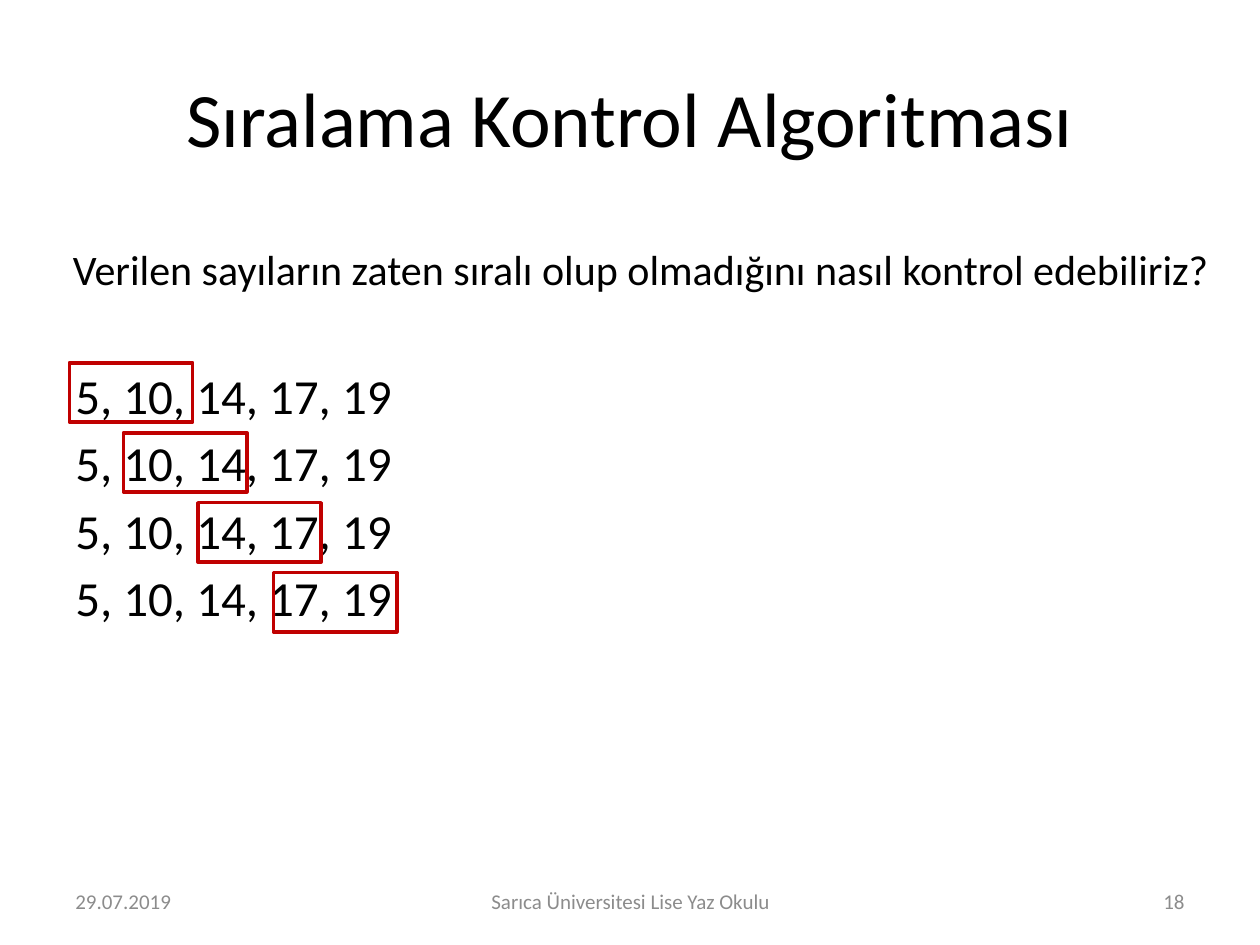
from dataclasses import dataclass

from pptx import Presentation
from pptx.dml.color import RGBColor
from pptx.enum.shapes import MSO_SHAPE
from pptx.enum.text import MSO_ANCHOR, PP_ALIGN
from pptx.util import Inches, Pt

RECTANGLE = MSO_SHAPE.RECTANGLE
TOP, MIDDLE = MSO_ANCHOR.TOP, MSO_ANCHOR.MIDDLE
LEFT, CENTER, RIGHT = PP_ALIGN.LEFT, PP_ALIGN.CENTER, PP_ALIGN.RIGHT

FONT = "Calibri"
COLORS = {"text": "000000", "footer": "8C8C8C", "frame": "C00000"}
NUMBERS = "5, 10, 14, 17, 19"
FRAME_LEFTS = (0.55, 0.98, 1.57, 2.17)
FRAME_TOP, FRAME_PITCH = 2.88, 0.555


@dataclass(frozen=True)
class Area:
    """Position and size in inches."""

    left: float
    top: float
    width: float
    height: float

    def lengths(self) -> tuple:
        """Return the four values as slide lengths."""
        return tuple(Inches(v) for v in (self.left, self.top, self.width, self.height))


@dataclass(frozen=True)
class FooterItem:
    """One text of the footer row."""

    text: str
    left: float
    width: float
    align: PP_ALIGN


FOOTER = (
    FooterItem("29.07.2019", 0.5, 2.33, LEFT),
    FooterItem("Sarıca Üniversitesi Lise Yaz Okulu", 3.42, 3.17, CENTER),
    FooterItem("18", 7.17, 2.33, RIGHT),
)


def add_text(slide, text: str, area: Area, *, size: float, color: str = "text",
             align: PP_ALIGN = LEFT, anchor: MSO_ANCHOR = TOP, space_before: float = 0) -> None:
    """Add a wrapped text box with one paragraph per line of text."""
    frame = slide.shapes.add_textbox(*area.lengths()).text_frame
    frame.word_wrap = True
    frame.vertical_anchor = anchor
    frame.text = text
    for para in frame.paragraphs:
        para.alignment = align
        para.space_before = Pt(space_before)
        for span in para.runs:
            span.font.name = FONT
            span.font.size = Pt(size)
            span.font.color.rgb = RGBColor.from_string(COLORS[color])


def add_frame(slide, area: Area) -> None:
    """Add an unfilled red frame around a pair of numbers."""
    box = slide.shapes.add_shape(RECTANGLE, *area.lengths())
    box.shadow.inherit = False
    box.fill.background()
    box.line.color.rgb = RGBColor.from_string(COLORS["frame"])
    box.line.width = Pt(2)


def main() -> None:
    """Build the slide about checking whether numbers are sorted."""
    deck = Presentation()
    deck.slide_width, deck.slide_height = Inches(10), Inches(7.5)
    page = deck.slides.add_slide(deck.slide_layouts[6])

    add_text(page, "Sıralama Kontrol Algoritması", Area(0.5, 0.3, 9, 1.25),
             size=44, align=CENTER, anchor=MIDDLE)
    add_text(page, "\n".join([NUMBERS] * len(FRAME_LEFTS)), Area(0.5, 2.85, 3.52, 2.47),
             size=28, space_before=5)
    for row, left in enumerate(FRAME_LEFTS):
        add_frame(page, Area(left, FRAME_TOP + row * FRAME_PITCH, 0.98, 0.47))
    add_text(page, "Verilen sayıların zaten sıralı olup olmadığını nasıl kontrol edebiliriz?",
             Area(0.48, 1.88, 9.36, 0.5), size=24)
    for item in FOOTER:
        add_text(page, item.text, Area(item.left, 6.95, item.width, 0.4),
                 size=12, color="footer", align=item.align, anchor=MIDDLE)

    deck.save("out.pptx")


if __name__ == "__main__":
    main()
